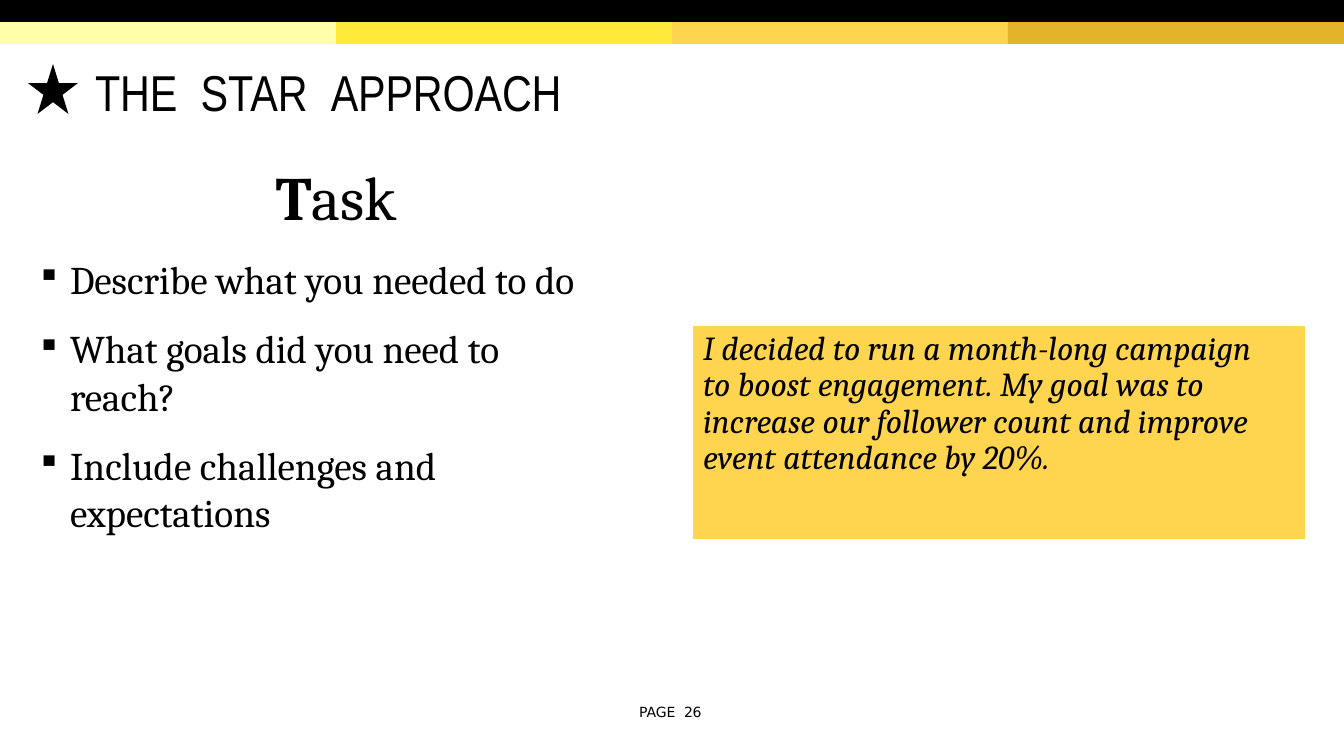
from dataclasses import dataclass

from lxml import etree
from pptx import Presentation
from pptx.dml.color import RGBColor
from pptx.enum.shapes import MSO_SHAPE
from pptx.enum.text import MSO_ANCHOR, MSO_AUTO_SIZE, PP_ALIGN
from pptx.oxml.ns import qn
from pptx.util import Emu, Pt

RECT, STAR = MSO_SHAPE.RECTANGLE, MSO_SHAPE.STAR_5_POINT
LEFT, CENTER = PP_ALIGN.LEFT, PP_ALIGN.CENTER
TOP, FIXED = MSO_ANCHOR.TOP, MSO_AUTO_SIZE.NONE
WIDE, HIGH = 1344, 756
SCALE = 12192000 / WIDE


@dataclass(frozen=True)
class Theme:
    ink: str = "000000"
    gold: str = "FFD44F"
    bands: tuple = ("FFFFAA", "FFEA3C", "FFD44F", "E3B429")
    head: str = "Arial Narrow"
    body: str = "Cambria"
    foot: str = "DejaVu Sans"
    title: int = 36
    lead: int = 44
    list: int = 28
    note: int = 24
    page: int = 10


THEME = Theme()


def px(n):
    return Emu(round(n * SCALE))


def place(shape, box):
    shape.left, shape.top, shape.width, shape.height = map(px, box)


def block(slide, kind, box, color):
    shape = slide.shapes.add_shape(kind, *map(px, box))
    shape.shadow.inherit = False
    shape.fill.solid()
    shape.fill.fore_color.rgb = RGBColor.from_string(color)
    shape.line.fill.background()
    return shape


def frame(shape, top=0):
    """Clear the margins, except the top one, and hold the size fixed."""
    text = shape.text_frame
    text.word_wrap = True
    text.auto_size = FIXED
    text.vertical_anchor = TOP
    text.margin_left = text.margin_right = text.margin_bottom = 0
    text.margin_top = px(top)
    return text


def write(para, words, font, size, bold=False, italic=False, gap=0):
    """Add a run; gap is extra letter spacing in points."""
    run = para.add_run()
    run.text = words
    run.font.name, run.font.size = font, Pt(size)
    run.font.bold, run.font.italic = bold, italic
    run.font.color.rgb = RGBColor.from_string(THEME.ink)
    if gap:
        run.font._element.set("spc", str(round(gap * 100)))


def indent(para, left=0, first=0, right=0):
    props = para._p.get_or_add_pPr()
    for name, size in (("marL", left), ("indent", first), ("marR", right)):
        props.set(name, str(px(size)))
    return props


def bullet(para, hang):
    props = indent(para, left=hang, first=-hang, right=40)
    etree.SubElement(props, qn("a:buSzPct")).set("val", "84000")
    etree.SubElement(props, qn("a:buChar")).set("char", "▪")
    tabs = etree.SubElement(props, qn("a:tabLst"))
    tab = etree.SubElement(tabs, qn("a:tab"))
    tab.set("pos", str(px(hang)))
    tab.set("algn", "l")


def banner(slide, box):
    left, top, width, height = box
    half = height / 2
    step = width / len(THEME.bands)
    for i, color in enumerate(THEME.bands):
        block(slide, RECT, (left + i * step, top + half, step, half), color)
    block(slide, RECT, (left, top, width, half), THEME.ink)


def header(slide, box):
    left, top, width, height = box
    block(slide, STAR, (left, top + 4, 50, 50), THEME.ink)
    title = slide.shapes.title
    place(title, (left + 67, top, width - 67, height))
    para = frame(title, top=1).paragraphs[0]
    para.alignment = LEFT
    for words, gap in (("THE", 0), (" ", 8.2), ("STAR", 0), (" ", 8.2),
                       ("APPROACH", -0.1)):
        write(para, words, THEME.head, THEME.title, gap=gap)


def points(slide, box, lead, items):
    text = frame(slide.shapes.add_textbox(*map(px, box)), top=38)
    para = text.paragraphs[0]
    indent(para, left=14)
    para.alignment = CENTER
    write(para, lead[0], THEME.body, THEME.lead, bold=True)
    write(para, lead[1:], THEME.body, THEME.lead)
    for item in items:
        para = text.add_paragraph()
        bullet(para, 33)
        para.space_before = Pt(16)
        write(para, item, THEME.body, THEME.list)


def callout(slide, box, words):
    para = frame(block(slide, RECT, box, THEME.gold), top=5).paragraphs[0]
    indent(para, left=10, right=35)
    para.alignment = LEFT
    para.line_spacing = Pt(25.9)
    write(para, words, THEME.body, THEME.note, italic=True)


def footer(slide, box):
    para = frame(slide.shapes.add_textbox(*map(px, box)), top=1).paragraphs[0]
    indent(para, left=1)
    for words, gap in (("PAGE", 0), (" ", 3), ("26", -0.2)):
        write(para, words, THEME.foot, THEME.page, gap=gap)


def main():
    deck = Presentation()
    deck.slide_width, deck.slide_height = px(WIDE), px(HIGH)
    slide = deck.slides.add_slide(deck.slide_layouts[5])
    banner(slide, (0, 0, WIDE, 44))
    header(slide, (28, 60, 665, 62))
    points(slide, (37, 121, 585, 416), "Task", (
        "Describe what you needed to do",
        "What goals did you need to reach?",
        "Include challenges and expectations",
    ))
    callout(slide, (693, 326, 612, 213),
            "I decided to run a month-long campaign to boost engagement. "
            "My goal was to increase our follower count and improve event "
            "attendance by 20%.")
    footer(slide, (638, 703, 73, 20))
    deck.save("out.pptx")


if __name__ == "__main__":
    main()
